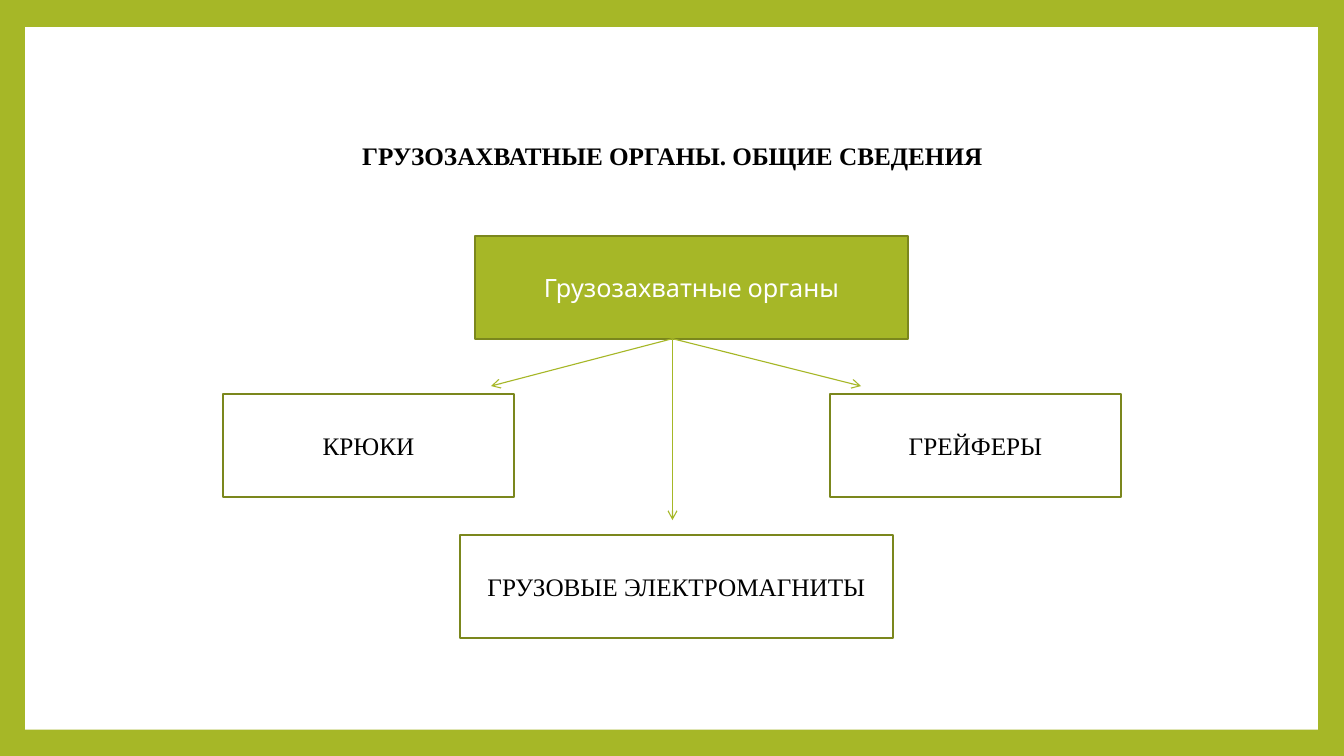
from dataclasses import dataclass
from lxml import etree
from pptx import Presentation
from pptx.dml.color import RGBColor
from pptx.enum.shapes import MSO_CONNECTOR, MSO_SHAPE
from pptx.enum.text import MSO_ANCHOR, PP_ALIGN
from pptx.oxml.ns import qn
from pptx.util import Inches, Pt

RECT = MSO_SHAPE.RECTANGLE
LINE = MSO_CONNECTOR.STRAIGHT
MIDDLE = MSO_ANCHOR.MIDDLE
CENTER = PP_ALIGN.CENTER


@dataclass(frozen=True)
class Theme:
    lime: RGBColor = RGBColor.from_string("A6B727")
    olive: RGBColor = RGBColor.from_string("7B871D")
    white: RGBColor = RGBColor.from_string("FFFFFF")
    black: RGBColor = RGBColor.from_string("000000")
    serif: str = "Times New Roman"
    sans: str = "Cabin"
    size: int = 18
    edge: float = 1.5
    thin: float = 0.79


theme = Theme()
WIDE, HIGH = 13.33, 7.5
TITLE = "ГРУЗОЗАХВАТНЫЕ ОРГАНЫ. ОБЩИЕ СВЕДЕНИЯ"
ROOT = ("Грузозахватные органы", 4.71, 2.34, 4.3)
KINDS = [
    ("ГРУЗОВЫЕ ЭЛЕКТРОМАГНИТЫ", 4.56, 5.31, 4.3),
    ("ГРЕЙФЕРЫ", 8.23, 3.91, 2.89),
    ("КРЮКИ", 2.21, 3.91, 2.89),
]
BOX_HIGH = 1.02
TIPS = [(4.87, 3.83), (6.67, 5.16), (8.54, 3.83)]


def write(shape, text, font=theme.serif, color=theme.black, bold=False, space=1.0):
    frame = shape.text_frame
    frame.word_wrap = True
    frame.vertical_anchor = MIDDLE
    par = frame.paragraphs[0]
    par.alignment = CENTER
    par.line_spacing = space
    run = par.add_run()
    run.text = text
    run.font.name = font
    run.font.size = Pt(theme.size)
    run.font.bold = bold
    run.font.color.rgb = color


def add_rect(slide, left, top, width, height, fill=None, edge=None):
    shape = slide.shapes.add_shape(
        RECT, Inches(left), Inches(top), Inches(width), Inches(height))
    shape.shadow.inherit = False
    if fill is None:
        shape.fill.background()
    else:
        shape.fill.solid()
        shape.fill.fore_color.rgb = fill
    if edge is None:
        shape.line.fill.background()
    else:
        shape.line.color.rgb = edge
        shape.line.width = Pt(theme.edge)
    return shape


def add_box(slide, label, left, top, width, fill=None, **style):
    box = add_rect(slide, left, top, width, BOX_HIGH, fill, theme.olive)
    write(box, label, **style)


def add_arrow(slide, start, tip):
    arrow = slide.shapes.add_connector(LINE, *map(Inches, start + tip))
    arrow.line.color.rgb = theme.lime
    arrow.line.width = Pt(theme.thin)
    etree.SubElement(arrow.line._get_or_add_ln(), qn("a:tailEnd"), type="arrow")
    etree.SubElement(arrow._element.spPr, qn("a:effectLst"))


def main():
    deck = Presentation()
    deck.slide_width, deck.slide_height = Inches(WIDE), Inches(HIGH)
    slide = deck.slides.add_slide(deck.slide_layouts[5])
    slide.background.fill.solid()
    slide.background.fill.fore_color.rgb = theme.lime

    panel = add_rect(slide, 0.25, 0.27, 12.82, 6.97, theme.white)
    title = slide.shapes.title
    title._element.addprevious(panel._element)
    title.left, title.top = Inches(2.17), Inches(1.25)
    title.width, title.height = Inches(9), Inches(0.62)
    write(title, TITLE, bold=True, space=0.9)

    add_box(slide, *ROOT, fill=theme.lime, font=theme.sans, color=theme.white)
    for kind in KINDS:
        add_box(slide, *kind)
    start = (6.67, ROOT[2] + BOX_HIGH)
    for tip in TIPS:
        add_arrow(slide, start, tip)
    deck.save("out.pptx")


if __name__ == "__main__":
    main()
